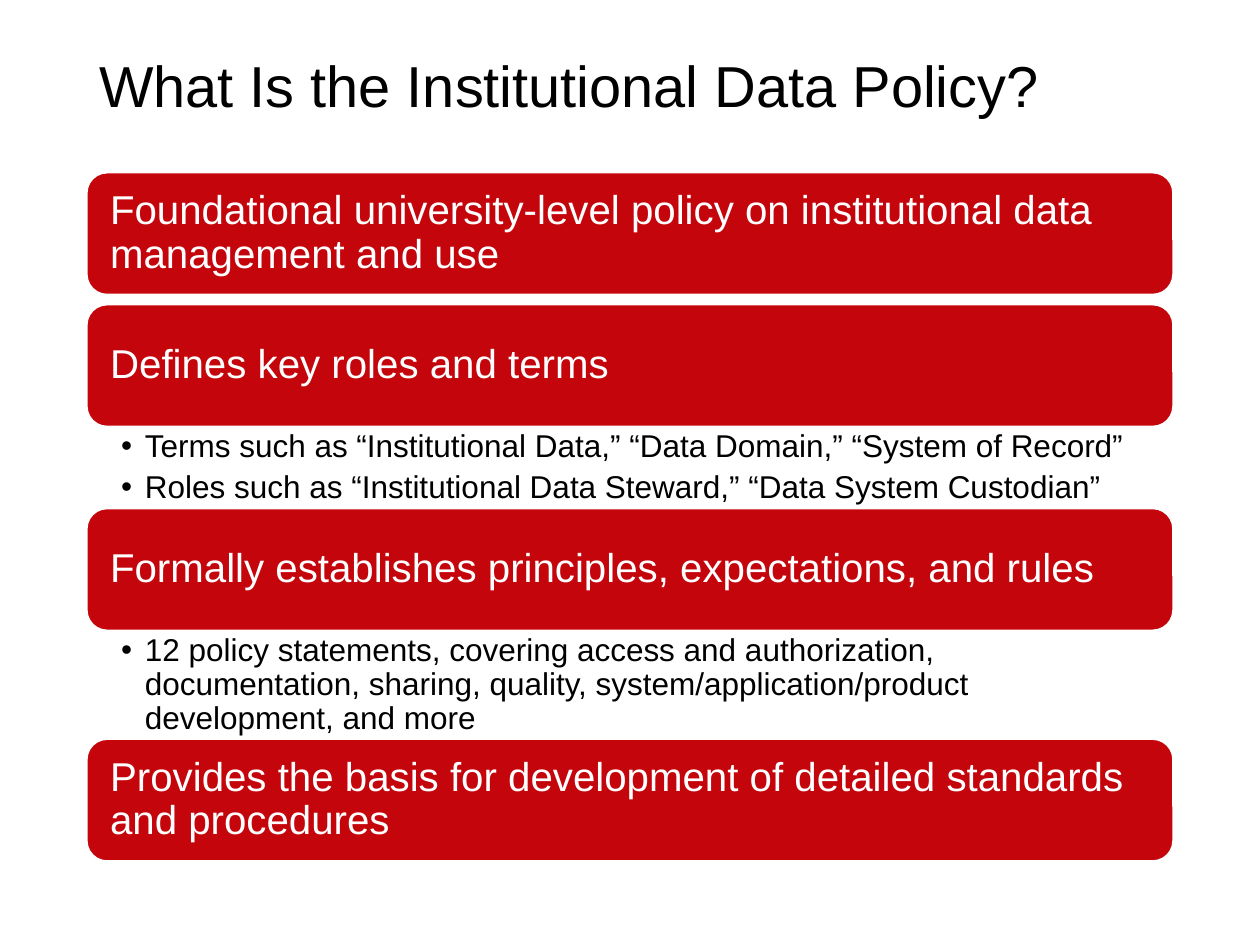
"""Build the slide on what the institutional data policy is."""
from dataclasses import dataclass
from typing import Any

from lxml.etree import SubElement as Sub
from pptx import Presentation as Deck
from pptx.dml.color import RGBColor as Rgb
from pptx.enum.shapes import MSO_SHAPE as Form
from pptx.enum.text import MSO_ANCHOR as Anchor, MSO_AUTO_SIZE as Auto, PP_ALIGN as Align
from pptx.oxml.ns import qn
from pptx.util import Cm, Pt

HUES = {"red": "C5050C", "white": "FFFFFF", "black": "000000"}
LEFT, WIDTH, TOP = 1.75, 21.9, 3.48
BAR, GAP = 2.46, 0.2


@dataclass
class Part:
    head: str
    items: tuple[str, ...] = ()
    depth: float = GAP


PARTS = [
    Part("Foundational university-level policy on institutional data management and use"),
    Part(
        "Defines key roles and terms",
        (
            "Terms such as “Institutional Data,” “Data Domain,” “System of Record”",
            "Roles such as “Institutional Data Steward,” “Data System Custodian”",
        ),
        1.65,
    ),
    Part(
        "Formally establishes principles, expectations, and rules",
        (
            "12 policy statements, covering access and authorization, documentation, "
            "sharing, quality, system/application/product development, and more",
        ),
        2.19,
    ),
    Part("Provides the basis for development of detailed standards and procedures"),
]


def place(shape: Any, top: float, height: float) -> None:
    """Put a shape in the column."""
    shape.left, shape.top = Cm(LEFT), Cm(top)
    shape.width, shape.height = Cm(WIDTH), Cm(height)


def write(shape: Any, *lines: str, size: float, hue: str = "black",
          pads: tuple[float, ...] = (0.25, 0.13, 0.25, 0.13),
          anchor: Any = Anchor.MIDDLE, after: float = 0, hang: float = 0) -> None:
    """Fill a shape with formatted lines, bulleted when hang is set."""
    frame = shape.text_frame
    frame.word_wrap, frame.auto_size = True, Auto.NONE
    frame.vertical_anchor = anchor
    (frame.margin_left, frame.margin_top,
     frame.margin_right, frame.margin_bottom) = map(Cm, pads)
    frame.text = "\n".join(lines)
    for para in frame.paragraphs:
        para.alignment = Align.LEFT
        para.line_spacing = 0.9
        para.space_before, para.space_after = Pt(0), Pt(after)
        if hang:
            props = para._p.get_or_add_pPr()
            props.set("marL", str(Cm(hang)))
            props.set("indent", str(-Cm(hang)))
            Sub(props, qn("a:buChar"), char="•")
        font = para.runs[0].font
        font.name, font.size = "Arial", Pt(size)
        font.color.rgb = Rgb.from_string(HUES[hue])


def draw_bar(slide: Any, text: str, top: float) -> None:
    """Draw a red bar with its heading."""
    bar = slide.shapes.add_shape(
        Form.ROUNDED_RECTANGLE, Cm(LEFT), Cm(top), Cm(WIDTH), Cm(BAR))
    bar.shadow.inherit = False
    bar.fill.solid()
    bar.fill.fore_color.rgb = Rgb.from_string(HUES["red"])
    bar.line.color.rgb = Rgb.from_string(HUES["white"])
    bar.line.width = Pt(1)
    write(bar, text, size=23, hue="white", pads=(0.35, 0.25, 0.35, 0.25))


def main() -> None:
    """Build and save the deck."""
    deck = Deck()
    deck.slide_width, deck.slide_height = Cm(25.4), Cm(19.05)
    slide = deck.slides.add_slide(deck.slide_layouts[3])
    title, *lists = slide.placeholders
    place(title, 0.89, 1.78)
    write(title, "What Is the Institutional Data Policy?", size=33)
    spare = iter(lists)
    top = TOP
    for part in PARTS:
        draw_bar(slide, part.head, top)
        top += BAR
        if part.items:
            body = next(spare)
            place(body, top, part.depth)
            write(body, *part.items, size=18, pads=(0.69, 0.08, 0.46, 0.08),
                  anchor=Anchor.TOP, after=4, hang=0.48)
        top += part.depth
    deck.save("out.pptx")


if __name__ == "__main__":
    main()
